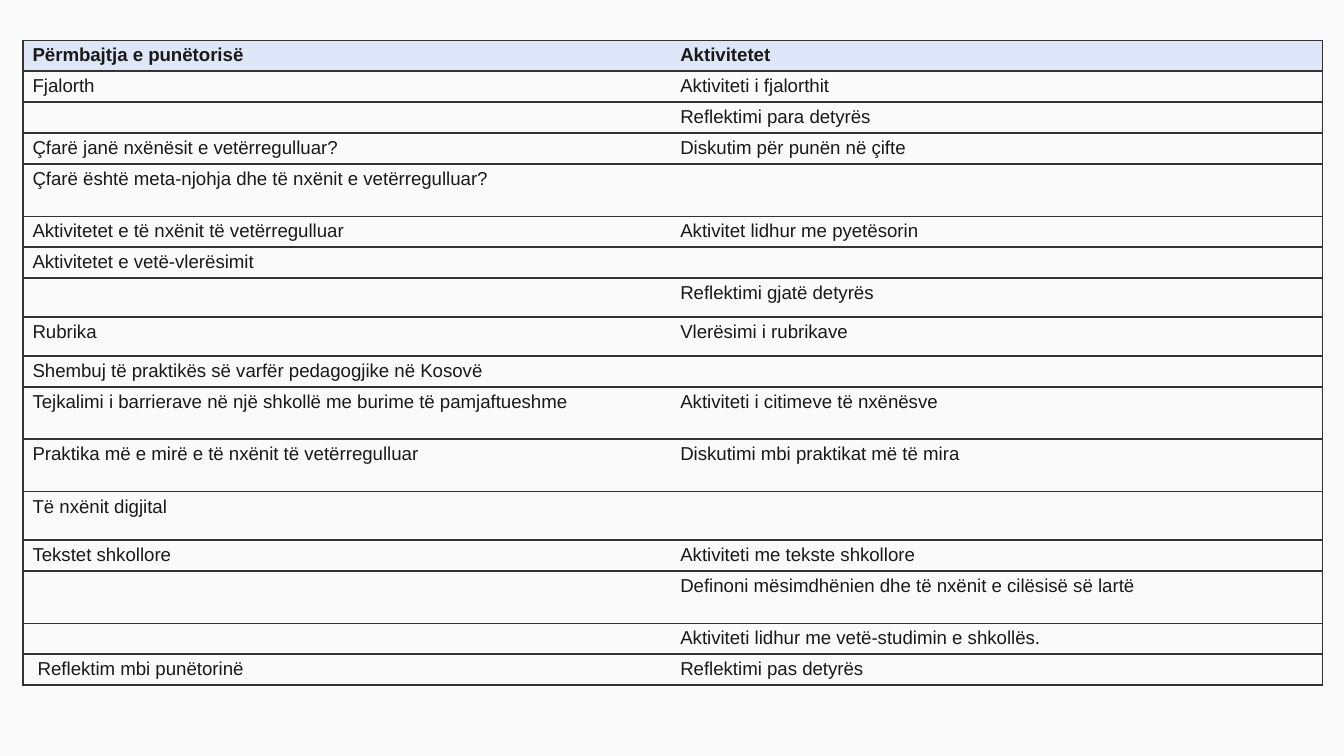
from lxml.etree import SubElement
from pptx import Presentation
from pptx.dml.color import RGBColor
from pptx.oxml.ns import qn
from pptx.util import Inches, Pt

COLORS = {"background": "FAFAFA", "header": "DEE6F7", "text": "191919", "border": "333333"}
FONT = "Arial"
TEXT_SIZE = 10
LINE_WIDTH = 1
SIDE_MARGIN, TOP_MARGIN = Pt(5.2), Pt(2.6)

# Row heights: one line, some extra room, two lines
SINGLE, MEDIUM, LARGE, DOUBLE = 0.23, 0.29, 0.36, 0.39
COLUMN_WIDTHS = (4.82, 4.85)

# Workshop content, activity, row height
PROGRAMME = [
    ("Përmbajtja e punëtorisë", "Aktivitetet", SINGLE),
    ("Fjalorth", "Aktiviteti i fjalorthit", SINGLE),
    ("", "Reflektimi para detyrës", SINGLE),
    ("Çfarë janë nxënësit e vetërregulluar?", "Diskutim për punën në çifte", SINGLE),
    ("Çfarë është meta-njohja dhe të nxënit e vetërregulluar?", "", DOUBLE),
    ("Aktivitetet e të nxënit të vetërregulluar", "Aktivitet lidhur me pyetësorin", SINGLE),
    ("Aktivitetet e vetë-vlerësimit", "", SINGLE),
    ("", "Reflektimi gjatë detyrës", MEDIUM),
    ("Rubrika", "Vlerësimi i rubrikave", MEDIUM),
    ("Shembuj të praktikës së varfër pedagogjike në Kosovë", "", SINGLE),
    ("Tejkalimi i barrierave në një shkollë me burime të pamjaftueshme",
     "Aktiviteti i citimeve të nxënësve", DOUBLE),
    ("Praktika më e mirë e të nxënit të vetërregulluar",
     "Diskutimi mbi praktikat më të mira", DOUBLE),
    ("Të nxënit digjital", "", LARGE),
    ("Tekstet shkollore", "Aktiviteti me tekste shkollore", SINGLE),
    ("", "Definoni mësimdhënien dhe të nxënit e cilësisë së lartë", DOUBLE),
    ("", "Aktiviteti lidhur me vetë-studimin e shkollës.", SINGLE),
    (" Reflektim mbi punëtorinë", "Reflektimi pas detyrës", SINGLE),
]


def rgb(name):
    return RGBColor.from_string(COLORS[name])


class SlideBuilder:
    def __init__(self, slide):
        self.slide = slide

    def background(self):
        fill = self.slide.background.fill
        fill.solid()
        fill.fore_color.rgb = rgb("background")

    def table(self, left, top, widths, rows):
        heights = [height for *_, height in rows]
        table = self.slide.shapes.add_table(
            len(rows), len(widths), Inches(left), Inches(top),
            Inches(sum(widths)), Inches(sum(heights))).table
        table.first_row = table.horz_banding = False
        for column, width in zip(table.columns, widths):
            column.width = Inches(width)
        for row, height in zip(table.rows, heights):
            row.height = Inches(height)
        for r, (*texts, _) in enumerate(rows):
            for c, text in enumerate(texts):
                cell = table.cell(r, c)
                self.cell_text(cell, text, bold=r == 0)
                # Only the outer sides have vertical lines
                sides = "TB" + ("L" if c == 0 else "") + ("R" if c == len(widths) - 1 else "")
                self.cell_borders(cell, sides)
                if r == 0:
                    cell.fill.solid()
                    cell.fill.fore_color.rgb = rgb("header")
                else:
                    cell.fill.background()

    def cell_text(self, cell, text, bold):
        cell.margin_left = cell.margin_right = SIDE_MARGIN
        cell.margin_top = cell.margin_bottom = TOP_MARGIN
        cell.text_frame.text = text
        paragraph = cell.text_frame.paragraphs[0]
        for run in paragraph.runs:
            run.font.name = FONT
            run.font.size = Pt(TEXT_SIZE)
            run.font.bold = bold
            run.font.color.rgb = rgb("text")
        if not text:
            # An empty cell must not stretch its row
            end = SubElement(paragraph._p, qn("a:endParaRPr"), sz=str(TEXT_SIZE * 100))
            SubElement(end, qn("a:latin"), typeface=FONT)

    def cell_borders(self, cell, sides):
        properties = cell._tc.get_or_add_tcPr()
        for side in "LRTB":
            line = SubElement(properties, qn(f"a:ln{side}"), w=str(Pt(LINE_WIDTH)))
            if side in sides:
                fill = SubElement(line, qn("a:solidFill"))
                SubElement(fill, qn("a:srgbClr"), val=COLORS["border"])
            else:
                SubElement(line, qn("a:noFill"))


def main():
    deck = Presentation()
    # Widescreen, 16:9
    deck.slide_width, deck.slide_height = Inches(10), Inches(10 * 9 / 16)
    builder = SlideBuilder(deck.slides.add_slide(deck.slide_layouts[6]))
    builder.background()
    # Workshop programme
    builder.table(0.17, 0.3, COLUMN_WIDTHS, PROGRAMME)
    deck.save("out.pptx")


if __name__ == "__main__":
    main()
